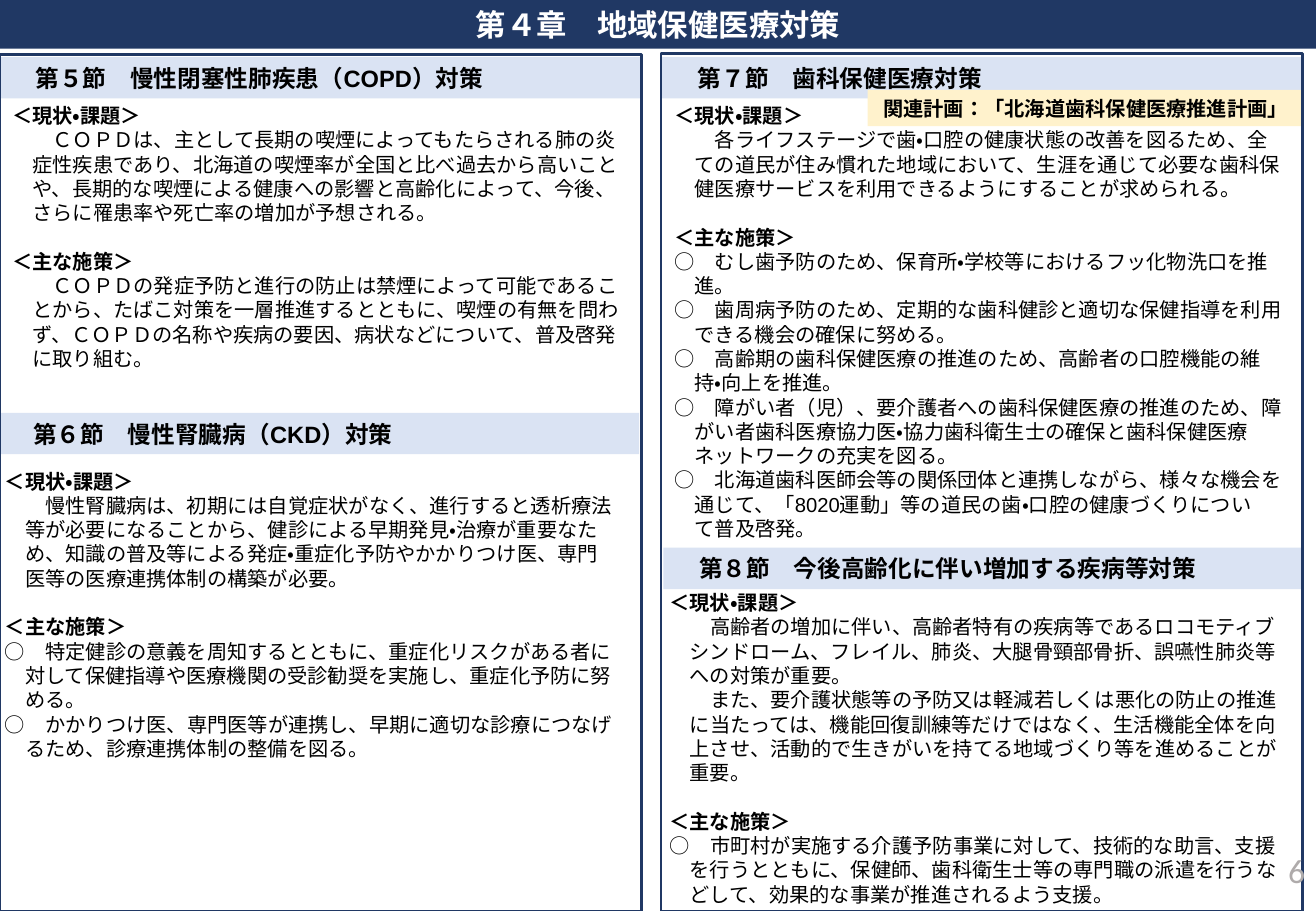
from pptx import Presentation
from pptx.dml.color import RGBColor
from pptx.enum.lang import MSO_LANGUAGE_ID as Language
from pptx.enum.shapes import MSO_SHAPE as Shape
from pptx.enum.text import MSO_ANCHOR as Anchor, MSO_AUTO_SIZE as AutoSize, PP_ALIGN as Align
from pptx.util import Inches, Pt
from lxml.etree import SubElement
from pptx.oxml.ns import qn

COLORS = {"navy": "203864", "pale": "DAE3F3", "cream": "FFF2CC",
          "white": "FFFFFF", "black": "000000", "gray": "AFABAB"}
BODY_SIZE, HEADING_SIZE = 12, 14
LINE_PITCH = 14.45
ISSUES, MEASURES = "＜現状・課題＞", "＜主な施策＞"

# Each line in a tuple ends where the printed line ends.
COPD = {
    ISSUES: [("ＣＯＰＤは、主として長期の喫煙によってもたらされる肺の炎",
              "症性疾患であり、北海道の喫煙率が全国と比べ過去から高いこと",
              "や、長期的な喫煙による健康への影響と高齢化によって、今後、",
              "さらに罹患率や死亡率の増加が予想される。")],
    MEASURES: [("ＣＯＰＤの発症予防と進行の防止は禁煙によって可能であるこ",
                "とから、たばこ対策を一層推進するとともに、喫煙の有無を問わ",
                "ず、ＣＯＰＤの名称や疾病の要因、病状などについて、普及啓発",
                "に取り組む。")],
}
KIDNEY = {
    ISSUES: [("慢性腎臓病は、初期には自覚症状がなく、進行すると透析療法",
              "等が必要になることから、健診による早期発見・治療が重要なた",
              "め、知識の普及等による発症・重症化予防やかかりつけ医、専門",
              "医等の医療連携体制の構築が必要。")],
    MEASURES: [("○　特定健診の意義を周知するとともに、重症化リスクがある者に",
                "対して保健指導や医療機関の受診勧奨を実施し、重症化予防に努",
                "める。"),
               ("○　かかりつけ医、専門医等が連携し、早期に適切な診療につなげ",
                "るため、診療連携体制の整備を図る。")],
}
DENTAL = {
    ISSUES: [("各ライフステージで歯・口腔の健康状態の改善を図るため、全",
              "ての道民が住み慣れた地域において、生涯を通じて必要な歯科保",
              "健医療サービスを利用できるようにすることが求められる。")],
    MEASURES: [("○　むし歯予防のため、保育所・学校等におけるフッ化物洗口を推",
                "進。"),
               ("○　歯周病予防のため、定期的な歯科健診と適切な保健指導を利用",
                "できる機会の確保に努める。"),
               ("○　高齢期の歯科保健医療の推進のため、高齢者の口腔機能の維",
                "持・向上を推進。"),
               ("○　障がい者（児）、要介護者への歯科保健医療の推進のため、障",
                "がい者歯科医療協力医・協力歯科衛生士の確保と歯科保健医療",
                "ネットワークの充実を図る。"),
               ("○　北海道歯科医師会等の関係団体と連携しながら、様々な機会を",
                "通じて、「8020運動」等の道民の歯・口腔の健康づくりについ",
                "て普及啓発。")],
}
AGING = {
    ISSUES: [("高齢者の増加に伴い、高齢者特有の疾病等であるロコモティブ",
              "シンドローム、フレイル、肺炎、大腿骨頸部骨折、誤嚥性肺炎等",
              "への対策が重要。"),
             ("また、要介護状態等の予防又は軽減若しくは悪化の防止の推進",
              "に当たっては、機能回復訓練等だけではなく、生活機能全体を向",
              "上させ、活動的で生きがいを持てる地域づくり等を進めることが",
              "重要。")],
    MEASURES: [("○　市町村が実施する介護予防事業に対して、技術的な助言、支援",
                "を行うとともに、保健師、歯科衛生士等の専門職の派遣を行うな",
                "どして、効果的な事業が推進されるよう支援。")],
}


class SlideBuilder:
    def __init__(self, slide):
        self.slide = slide

    def place(self, shape, box):
        for name, value in zip(("left", "top", "width", "height"), box):
            setattr(shape, name, Inches(value))

    def fill(self, shape, color):
        shape.fill.solid()
        shape.fill.fore_color.rgb = RGBColor.from_string(COLORS[color])

    def frame_format(self, shape, anchor=Anchor.MIDDLE):
        frame = shape.text_frame
        formats = {"word_wrap": True, "auto_size": AutoSize.NONE, "vertical_anchor": anchor,
                   "margin_left": Inches(0.1), "margin_right": Inches(0.1),
                   "margin_top": Inches(0.05), "margin_bottom": Inches(0.05)}
        for name, value in formats.items():
            setattr(frame, name, value)
        return frame

    def fill_paragraph(self, paragraph, parts, size, color="black", bold=True,
                       align=Align.LEFT, before=0, margin=0, indent=0):
        """Fill a paragraph from (text, font) parts; margin and indent are in points."""
        formats = {"alignment": align, "space_before": Pt(before), "space_after": Pt(0)}
        for name, value in formats.items():
            setattr(paragraph, name, value)
        properties = paragraph._p.get_or_add_pPr()
        properties.set("marL", str(Pt(margin)))
        properties.set("indent", str(Pt(indent)))
        SubElement(properties, qn("a:buNone"))
        for text, font in parts:
            for position, line in enumerate(text.split("\n")):
                if position:
                    paragraph.add_line_break()
                run = paragraph.add_run()
                run.text = line
                run_formats = {"name": font, "size": Pt(size), "bold": bold,
                               "language_id": Language.JAPANESE}
                for name, value in run_formats.items():
                    setattr(run.font, name, value)
                run.font.color.rgb = RGBColor.from_string(COLORS[color])

    def title(self, text, box):
        shape = self.slide.shapes.title
        self.place(shape, box)
        self.fill(shape, "navy")
        frame = self.frame_format(shape)
        self.fill_paragraph(frame.paragraphs[0], [(text, "Calibri")], 18, "white",
                            align=Align.CENTER)

    def body(self, index, sections, box, font="Arial"):
        shape = self.slide.placeholders[index]
        self.place(shape, box)
        frame = self.frame_format(shape, Anchor.TOP)
        paragraph = frame.paragraphs[0]
        for position, (heading, items) in enumerate(sections.items()):
            if position:
                paragraph = frame.add_paragraph()
            self.fill_paragraph(paragraph, [(heading, "Calibri")], BODY_SIZE,
                                before=LINE_PITCH if position else 0)
            for lines in items:
                hanging = lines[0].startswith("○")
                self.fill_paragraph(frame.add_paragraph(), [("\n".join(lines), font)],
                                    BODY_SIZE, bold=False, margin=BODY_SIZE,
                                    indent=-BODY_SIZE if hanging else BODY_SIZE)

    def rectangle(self, box):
        shape = self.slide.shapes.add_shape(Shape.RECTANGLE, *map(Inches, box))
        shape.shadow.inherit = False
        return shape

    def band(self, parts, box, color="pale", size=HEADING_SIZE, margin=HEADING_SIZE,
             align=Align.LEFT):
        shape = self.rectangle(box)
        self.fill(shape, color)
        shape.line.fill.background()
        frame = self.frame_format(shape)
        self.fill_paragraph(frame.paragraphs[0], parts, size, align=align, margin=margin)

    def border(self, box):
        shape = self.rectangle(box)
        shape.fill.background()
        shape.line.color.rgb = RGBColor.from_string(COLORS["navy"])
        shape.line.width = Pt(1.5)

    def page_number(self, text, box):
        frame = self.frame_format(self.slide.shapes.add_textbox(*map(Inches, box)))
        self.fill_paragraph(frame.paragraphs[0], [(text, "Calibri")], 20, "gray", False,
                            Align.RIGHT)


def main():
    presentation = Presentation()
    presentation.slide_width, presentation.slide_height = Inches(10.83), Inches(7.5)
    comparison_layout = presentation.slide_layouts[4]
    builder = SlideBuilder(presentation.slides.add_slide(comparison_layout))

    builder.title("第４章　地域保健医療対策", (0, 0, 10.83, 0.4))
    builder.body(1, COPD, (0, 0.8, 5.28, 2.32))
    builder.body(2, KIDNEY, (-0.06, 3.81, 5.28, 2.52), "Calibri")
    builder.body(3, DENTAL, (5.45, 0.8, 5.23, 3.74))
    builder.body(4, AGING, (5.41, 4.81, 5.28, 2.73))

    headings = [
        ([("第５節　慢性閉塞性肺疾患（", "Calibri"), ("COPD", "Arial"), ("）対策", "Calibri")],
         (0, 0.47, 5.28, 0.34)),
        ([("第６節　慢性腎臓病", "Calibri"), ("（CKD）", "Arial"), ("対策", "Calibri")],
         (-0.02, 3.4, 5.28, 0.34)),
        ([("第７節　歯科保健医療対策", "Calibri")], (5.45, 0.47, 5.27, 0.34)),
        ([("第８節　今後高齢化に伴い増加する疾病等対策", "Calibri")], (5.46, 4.51, 5.25, 0.34)),
    ]
    for parts, box in headings:
        builder.band(parts, box)
    builder.band([("関連計画：「北海道歯科保健医療推進計画」", "Calibri")], (7.14, 0.74, 3.59, 0.3),
                 "cream", BODY_SIZE, 0, Align.CENTER)

    for left, top in ((0, 0.45), (5.44, 0.44)):
        builder.border((left, top, 5.28, 7.5 - top))
    builder.page_number("6", (8.4, 6.96, 2.44, 0.4))
    presentation.save("out.pptx")


if __name__ == "__main__":
    main()
